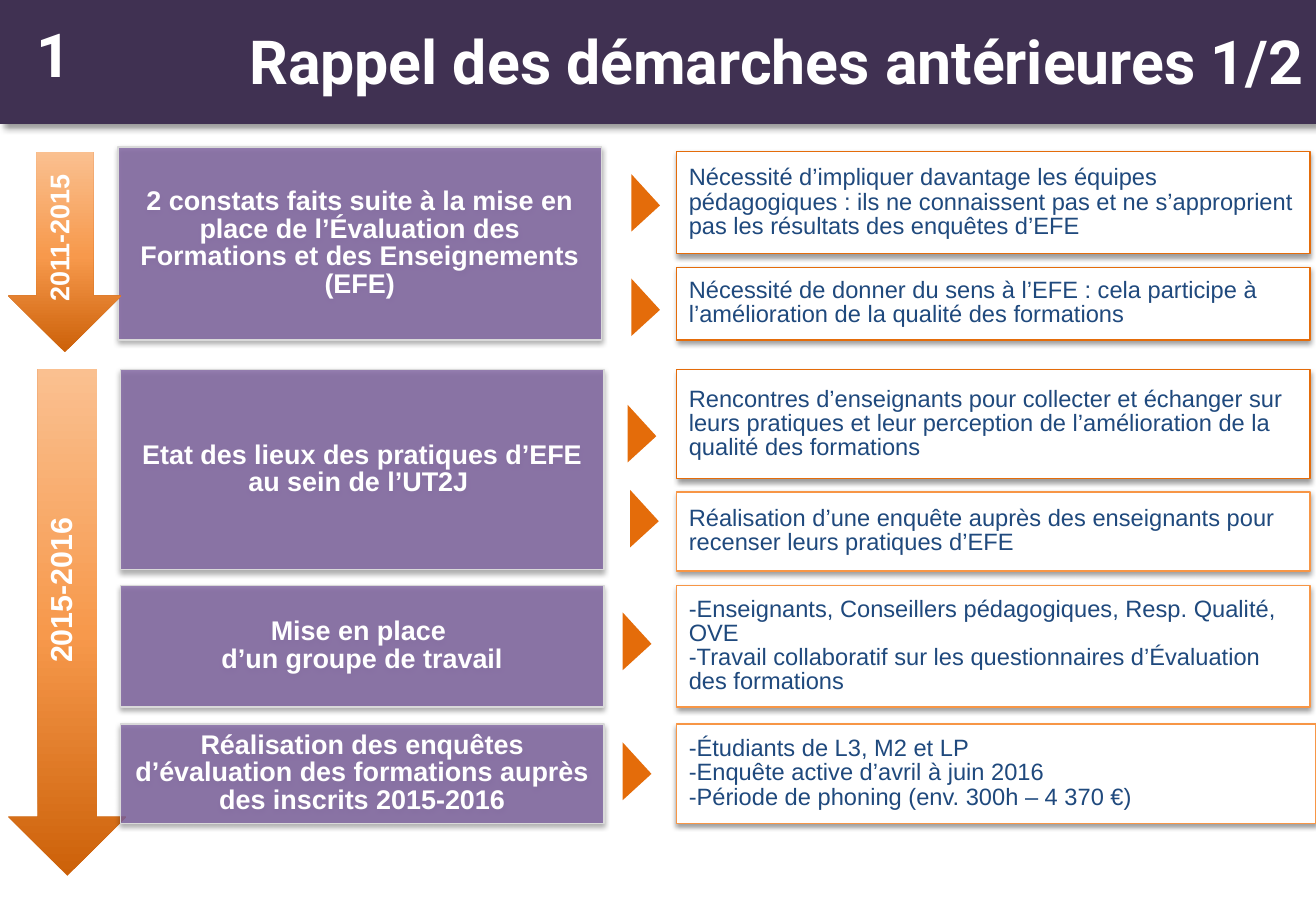
from lxml import etree
from pptx import Presentation
from pptx.dml.color import RGBColor
from pptx.enum.shapes import MSO_SHAPE
from pptx.enum.text import MSO_ANCHOR, MSO_AUTO_SIZE, PP_ALIGN
from pptx.oxml.ns import qn
from pptx.util import Emu, Pt

RECT, ROUND = MSO_SHAPE.RECTANGLE, MSO_SHAPE.ROUNDED_RECTANGLE
ARROW, WEDGE = MSO_SHAPE.DOWN_ARROW, MSO_SHAPE.RIGHT_TRIANGLE
MIDDLE, GROW = MSO_ANCHOR.MIDDLE, MSO_AUTO_SIZE.SHAPE_TO_FIT_TEXT
LEFT, CENTER, RIGHT = PP_ALIGN.LEFT, PP_ALIGN.CENTER, PP_ALIGN.RIGHT

SCALE = 9144
WHITE, NAVY, PLUM, VIOLET = "FFFFFF", "1F497D", "403152", "8064A2"
GREY, ORANGE, AMBER = "D9D9D9", "E46C0A", "F79646"
FADE = [(0, "CC6109"), (48, "F7994C"), (100, "FAC090")]

STEPS = [
    (97, 121, 159, "2 constats faits suite à la mise en place de l’Évaluation des "
                   "Formations et des Enseignements (EFE)"),
    (99, 304, 165, "Etat des lieux des pratiques d’EFE au sein de l’UT2J "),
    (99, 482, 100, "Mise en place \vd’un groupe de travail"),
    (99, 596, 82, "Réalisation des enquêtes d’évaluation des formations auprès "
                  "des inscrits 2015-2016"),
]
NOTES = [
    (125, 84, 521, ORANGE, "Nécessité d’impliquer davantage les équipes pédagogiques : "
                           "ils ne connaissent pas et ne s’approprient pas les résultats "
                           "des enquêtes d’EFE"),
    (220, 60, 521, ORANGE, "Nécessité de donner du sens à l’EFE : cela participe à "
                           "l’amélioration de la qualité des formations"),
    (304, 90, 521, ORANGE, "Rencontres d’enseignants pour collecter et échanger sur leurs "
                           "pratiques et leur perception de l’amélioration de la qualité "
                           "des formations"),
    (405, 65, 521, AMBER, "Réalisation d’une enquête auprès des enseignants pour recenser "
                          "leurs pratiques d’EFE"),
    (482, 100, 521, AMBER, "-Enseignants, Conseillers pédagogiques, Resp. Qualité, OVE\n"
                           "-Travail collaboratif sur les questionnaires d’Évaluation "
                           "des formations"),
    (596, 82, 526, AMBER, "-Étudiants de L3, M2 et LP\n"
                          "-Enquête active d’avril à juin 2016\n"
                          "-Période de phoning (env. 300h – 4 370 €)"),
]
TIPS = [(502, 151), (502, 237), (499, 341), (501, 411), (495, 512), (495, 619)]


def tint(code):
    return RGBColor.from_string(code)


def node(base, tag, **attrs):
    return etree.SubElement(base, qn(tag), {k: str(v) for k, v in attrs.items()})


class Deck:
    """Holds the slide and its style, and draws each kind of element."""

    def __init__(self, wide, high):
        self.show = Presentation()
        self.show.slide_width, self.show.slide_height = Emu(wide * SCALE), Emu(high * SCALE)
        self.slide = self.show.slides.add_slide(self.show.slide_layouts[6])

    def shape(self, kind, box, fill=None, line=None):
        item = self.slide.shapes.add_shape(kind, *(Emu(n * SCALE) for n in box))
        item.shadow.inherit = False
        if kind == ROUND:
            item.adjustments[0] = 0
        if fill:
            item.fill.solid()
            item.fill.fore_color.rgb = tint(fill)
        if line:
            item.line.color.rgb = tint(line)
            item.line.width = Pt(0.75)
        else:
            item.line.fill.background()
        return item

    def shade(self, item, alpha=38, blur=3.1, dist=1.6, turn=90):
        effects = item.element.spPr.find(qn("a:effectLst"))
        cast = node(effects, "a:outerShdw", blurRad=Pt(blur), dist=Pt(dist),
                    dir=turn * 60000, algn="t", rotWithShape=0)
        node(node(cast, "a:srgbClr", val="000000"), "a:alpha", val=alpha * 1000)

    def words(self, item, text, size, color, align, face="Arial", bold=True, lead=0.85):
        frame = item.text_frame
        frame.word_wrap = True
        frame.text = text
        for para in frame.paragraphs:
            para.alignment, para.line_spacing = align, lead
            font = para.font
            font.name, font.size, font.bold = face, Pt(size), bold
            font.color.rgb = tint(color)
        return frame

    def label(self, box, text, size, face="Arial"):
        item = self.slide.shapes.add_textbox(*(Emu(n * SCALE) for n in box))
        frame = self.words(item, text, size, WHITE, CENTER, face)
        frame.auto_size = GROW
        return item

    def title(self, text, mark):
        bar = self.shape(RECT, (0, -3, 1083, 105), PLUM)
        self.shade(bar, 40, 4, 3, 45)
        self.words(bar, text, 36, WHITE, RIGHT, "Roboto", lead=1.0).vertical_anchor = MIDDLE
        self.label((20, 18, 45, 64), mark, 36, "Roboto").text_frame.word_wrap = False

    def arrow(self, box, span, text, size):
        item = self.shape(ARROW, box)
        item.fill.gradient()
        item.fill.gradient_angle = 90
        stops = item.element.spPr.find(qn("a:gradFill")).find(qn("a:gsLst"))
        for stop in list(stops):
            stops.remove(stop)
        for place, code in FADE:
            node(node(stops, "a:gs", pos=place * 1000), "a:srgbClr", val=code)
        year = self.label(span, text, size)
        year.element.txBody.find(qn("a:bodyPr")).set("vert", "vert270")

    def step(self, left, top, high, text):
        item = self.shape(ROUND, (left, top, 398, high), VIOLET, GREY)
        paint = item.element.spPr.find(qn("a:solidFill"))
        node(paint[0], "a:alpha", val=80000)
        self.shade(item)
        self.words(item, text, 16, WHITE, CENTER).vertical_anchor = MIDDLE

    def note(self, top, high, wide, line, text):
        item = self.shape(ROUND, (557, top, wide, high), WHITE, line)
        self.shade(item)
        self.words(item, text, 14, NAVY, LEFT, bold=False).vertical_anchor = MIDDLE

    def tip(self, left, top):
        self.shape(WEDGE, (left, top, 35, 32), ORANGE).rotation = 227.6


def main():
    deck = Deck(1083, 750)
    deck.title("Rappel des démarches antérieures 1/2", "1")
    deck.arrow((7, 304, 97, 417), (34, 390, 92, 192), "2015-2016", 18)
    for step in STEPS:
        deck.step(*step)
    for note in NOTES:
        deck.note(*note)
    for tip in TIPS:
        deck.tip(*tip)
    deck.arrow((7, 125, 93, 165), (34, 127, 66, 138), "2011-2015", 16)
    deck.show.save("out.pptx")


if __name__ == "__main__":
    main()
